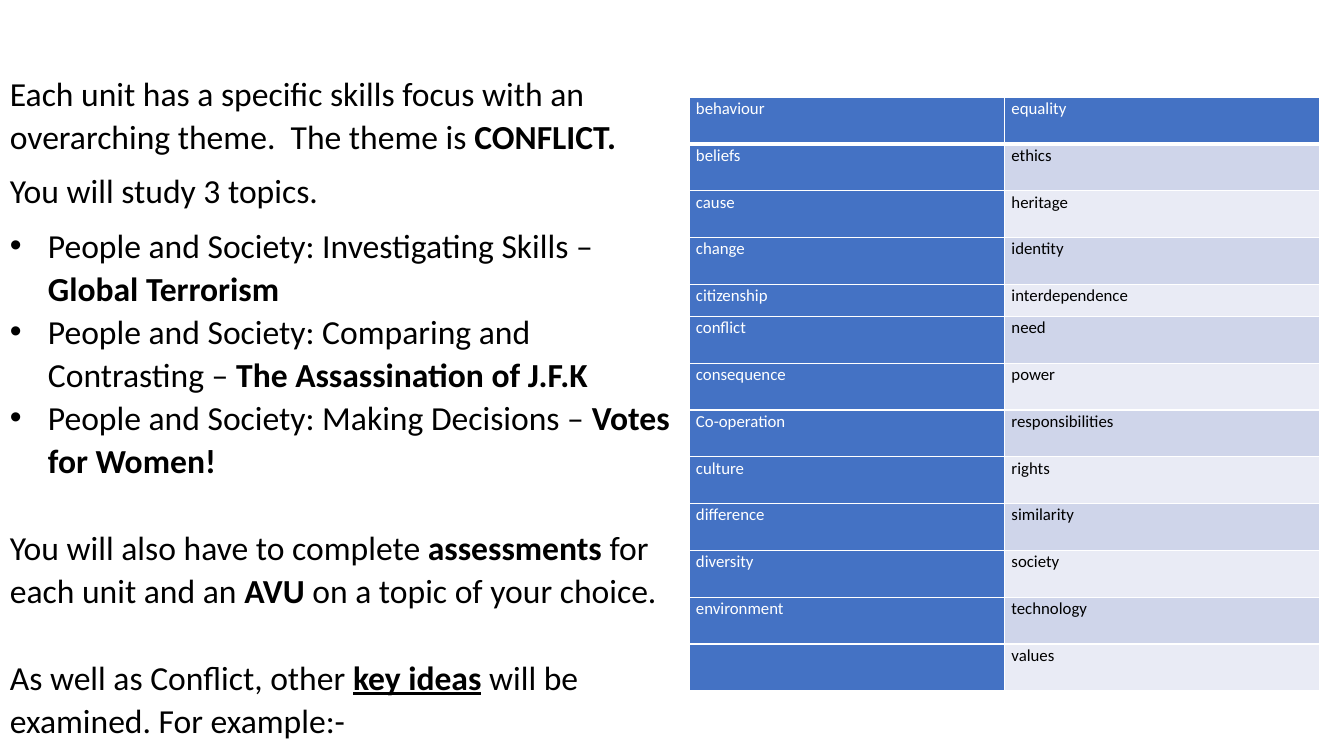
from lxml.etree import SubElement
from pptx import Presentation
from pptx.dml.color import RGBColor
from pptx.enum.text import MSO_AUTO_SIZE
from pptx.oxml.ns import qn
from pptx.util import Emu, Pt

PX = 914400 / 100.8
FONT = "Calibri"
BLACK, WHITE, BLUE = "000000", "FFFFFF", "4472C4"
BANDS = ("E9EBF5", "CFD5EA")
LINE_SPACING = 1.07
BLANK_LINE = 31  # points

# Each paragraph: its (text, style) runs and its paragraph format
BULLET = {"bullet": True}
COURSE_TEXT = [
    ([("Each unit has a specific skills focus with an overarching theme.  The theme is ", ""),
      ("CONFLICT.", "b")], {"after": 8}),
    ([("You will study 3 topics.", "")], {"after": 8}),
    ([("People and Society: Investigating Skills – ", ""), ("Global Terrorism", "b")], BULLET),
    ([("People and Society: Comparing and Contrasting – ", ""),
      ("The Assassination of J.F.K", "b")], BULLET),
    ([("People and Society: Making Decisions – ", ""), ("Votes for Women!", "b")], BULLET),
    ([("You will also have to complete ", ""), ("assessments", "b"),
      (" for each unit and an ", ""), ("AVU", "b"),
      (" on a topic of your choice.", "")], {"before": BLANK_LINE}),
    ([("As well as Conflict, other ", ""), ("key ideas", "bu"),
      (" will be examined. For example:-", "")], {"before": BLANK_LINE}),
]

KEY_IDEAS = [
    ("behaviour", "equality"), ("beliefs", "ethics"), ("cause", "heritage"),
    ("change", "identity"), ("citizenship", "interdependence"), ("conflict", "need"),
    ("consequence", "power"), ("Co-operation", "responsibilities"), ("culture", "rights"),
    ("difference", "similarity"), ("diversity", "society"), ("environment", "technology"),
    ("", "values"),
]
SHORT_ROW, SHORT_HEIGHT = 4, 32


def px(value):
    return Emu(round(value * PX))


def color(hex_string):
    return RGBColor.from_string(hex_string)


def add_text(paragraph, text, size, fill=BLACK, bold=False, underline=False):
    run = paragraph.add_run()
    run.text = text
    run.font.name = FONT
    run.font.size = Pt(size)
    run.font.bold = bold
    run.font.underline = underline
    run.font.color.rgb = color(fill)


def format_paragraph(paragraph, before=0, after=0, bullet=False):
    paragraph.line_spacing = LINE_SPACING
    paragraph.space_before = Pt(before)
    paragraph.space_after = Pt(after)
    if bullet:
        properties = paragraph._p.get_or_add_pPr()
        properties.set("marL", str(px(38)))
        properties.set("indent", str(px(-38)))
        SubElement(properties, qn("a:buFont"), typeface="Arial")
        SubElement(properties, qn("a:buChar"), char="•")


def add_course_text(slide, left, top, width, height):
    box = slide.shapes.add_textbox(px(left), px(top), px(width), px(height))
    frame = box.text_frame
    frame.word_wrap = True
    frame.auto_size = MSO_AUTO_SIZE.SHAPE_TO_FIT_TEXT
    for index, (runs, layout) in enumerate(COURSE_TEXT):
        paragraph = frame.add_paragraph() if index else frame.paragraphs[0]
        format_paragraph(paragraph, **layout)
        for text, style in runs:
            add_text(paragraph, text, 24, bold="b" in style, underline="u" in style)


def add_borders(cell, bottom):
    properties = cell._tc.get_or_add_tcPr()
    for side, width in (("L", 1), ("R", 1), ("T", 1), ("B", bottom)):
        line = SubElement(properties, qn(f"a:ln{side}"), w=str(Pt(width)))
        solid = SubElement(line, qn("a:solidFill"))
        SubElement(solid, qn("a:srgbClr"), val=WHITE)


def fill_cell(cell, text, row, column):
    on_blue = row == 0 or column == 0
    add_borders(cell, bottom=1 if row else 3)
    cell.fill.solid()
    cell.fill.fore_color.rgb = color(BLUE if on_blue else BANDS[row % 2])
    cell.margin_left = cell.margin_right = px(7)
    cell.margin_top = cell.margin_bottom = 0
    paragraph = cell.text_frame.paragraphs[0]
    format_paragraph(paragraph)
    if text:
        add_text(paragraph, text, 12, fill=WHITE if on_blue else BLACK)


def add_key_ideas(slide, left, top, width, height):
    rows = len(KEY_IDEAS)
    table = slide.shapes.add_table(rows, 2, px(left), px(top), px(width), px(height)).table
    for column in table.columns:
        column.width = px(width / 2)
    row_height = (height - SHORT_HEIGHT) / (rows - 1)
    for row, words in enumerate(KEY_IDEAS):
        table.rows[row].height = px(SHORT_HEIGHT if row == SHORT_ROW else row_height)
        for column, word in enumerate(words):
            fill_cell(table.cell(row, column), word, row, column)


def main():
    presentation = Presentation()
    presentation.slide_width = px(1344)
    presentation.slide_height = px(756)
    slide = presentation.slides.add_slide(presentation.slide_layouts[6])
    add_course_text(slide, 0, 65, 698, 684)
    add_key_ideas(slide, 689, 97, 631, 594)
    presentation.save("out.pptx")


if __name__ == "__main__":
    main()
